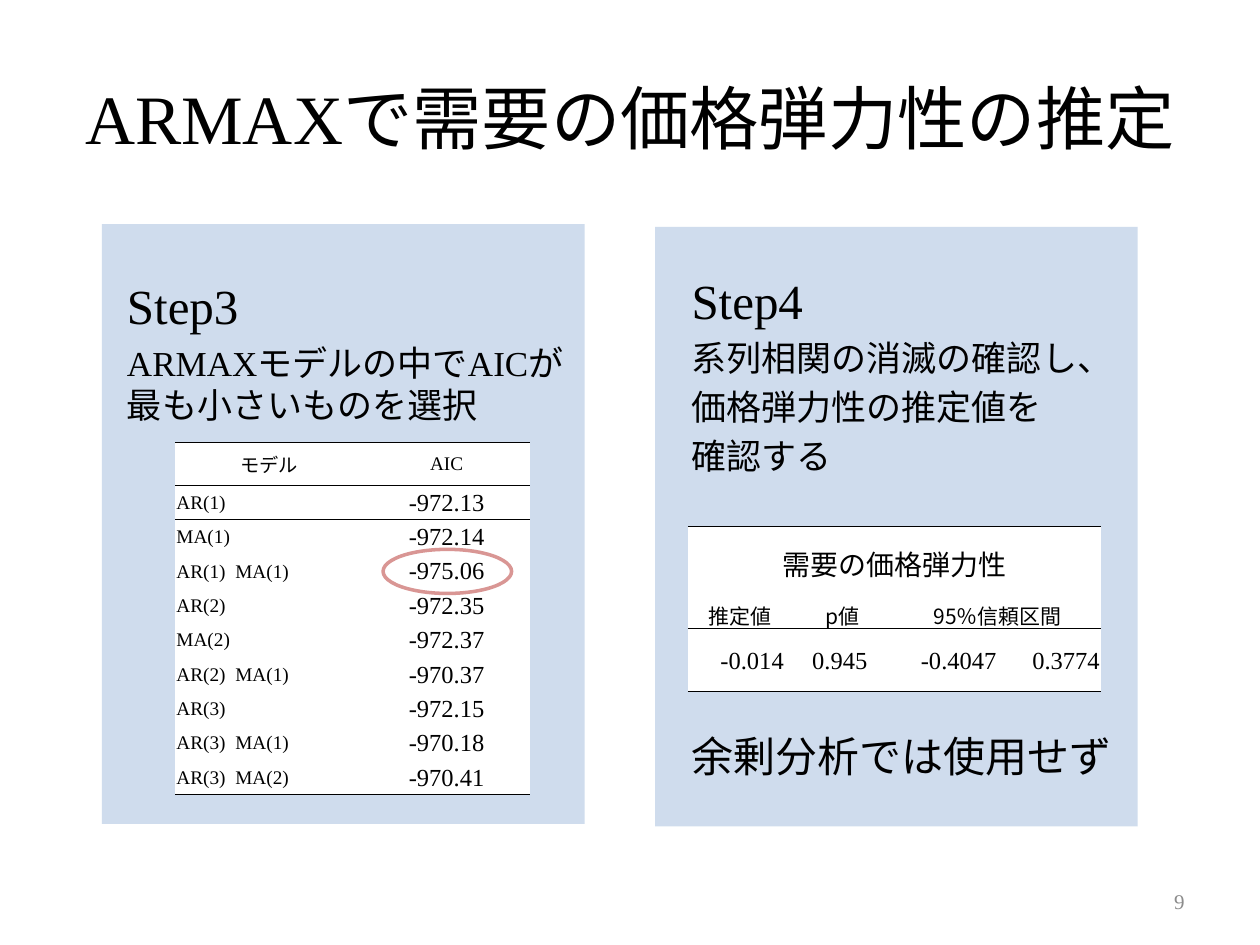
from lxml.etree import SubElement
from pptx import Presentation
from pptx.dml.color import RGBColor
from pptx.enum.shapes import MSO_SHAPE
from pptx.enum.text import MSO_ANCHOR, PP_ALIGN
from pptx.oxml import parse_xml
from pptx.oxml.ns import nsdecls, qn
from pptx.util import Inches, Pt

BLACK = RGBColor(0x00, 0x00, 0x00)
WHITE = RGBColor(0xFF, 0xFF, 0xFF)
BLUE = RGBColor(0x4F, 0x81, 0xBD)
ROSE = RGBColor(0xD9, 0x96, 0x94)
GREY = RGBColor(0x8C, 0x8C, 0x8C)
SERIF = "Times New Roman"
SANS = "Noto Sans CJK JP"
PLAIN = "{2D5ABB26-0587-4C30-8999-92F81FD0307C}"
LEFT, MID, RIGHT = PP_ALIGN.LEFT, PP_ALIGN.CENTER, PP_ALIGN.RIGHT

MODELS = [
    ("AR(1)", "-972.13"),
    ("MA(1)", "-972.14"),
    ("AR(1)  MA(1)", "-975.06"),
    ("AR(2)", "-972.35"),
    ("MA(2)", "-972.37"),
    ("AR(2)  MA(1)", "-970.37"),
    ("AR(3)", "-972.15"),
    ("AR(3)  MA(1)", "-970.18"),
    ("AR(3)  MA(2)", "-970.41"),
]


def add_run(para, text, size, font=SERIF, color=BLACK):
    run = para.add_run()
    run.text = text
    run.font.size = Pt(size)
    run.font.name = font
    run.font.color.rgb = color
    east = SubElement(run.font._element, qn("a:ea"))
    east.set("typeface", SANS)


def add_text(slide, box, lines, align=LEFT, anchor=MSO_ANCHOR.TOP,
             color=BLACK, gap=0.2, pitch=None):
    """Lines are (text, size); gap is a share of the size."""
    frame = slide.shapes.add_textbox(*map(Inches, box)).text_frame
    frame.word_wrap = True
    frame.vertical_anchor = anchor
    for i, (text, size) in enumerate(lines):
        para = frame.paragraphs[0] if i == 0 else frame.add_paragraph()
        para.alignment = align
        para.space_before = Pt(size * gap)
        if pitch and i > 0:
            para.line_spacing = Pt(size * pitch)
        add_run(para, text, size, color=color)
    return frame


def add_panel(slide, left, top):
    box = map(Inches, (left, top, 3.83, 4.76))
    panel = slide.shapes.add_shape(MSO_SHAPE.RECTANGLE, *box)
    panel.shadow.inherit = False
    panel.line.fill.background()
    panel.fill.solid()
    panel.fill.fore_color.rgb = BLUE
    tint = panel._element.spPr.find(".//" + qn("a:srgbClr"))
    SubElement(tint, qn("a:alpha")).set("val", "27000")


def add_ring(slide, box):
    ring = slide.shapes.add_shape(MSO_SHAPE.OVAL, *map(Inches, box))
    ring.shadow.inherit = False
    ring.fill.background()
    ring.line.color.rgb = ROSE
    ring.line.width = Pt(2)


def add_grid(slide, left, top, cols, rows):
    frame = slide.shapes.add_table(
        len(rows), len(cols), Inches(left), Inches(top),
        Inches(sum(cols)), Inches(sum(rows)))
    grid = frame.table
    grid.first_row = grid.horz_banding = False
    grid._tbl.tblPr.find(qn("a:tableStyleId")).text = PLAIN
    for col, width in zip(grid.columns, cols):
        col.width = Inches(width)
    for row, height in zip(grid.rows, rows):
        row.height = Inches(height)
    for cell in grid.iter_cells():
        cell.fill.solid()
        cell.fill.fore_color.rgb = WHITE
        cell.vertical_anchor = MSO_ANCHOR.MIDDLE
        cell.margin_left = cell.margin_right = cell.margin_top = Inches(0.01)
        cell.margin_bottom = 0
    return grid


def set_cell(cell, text, size, align=MID, font=SERIF):
    para = cell.text_frame.paragraphs[0]
    para.alignment = align
    add_run(para, text, size, font)


def rule(grid, row, *sides):
    """Draw thin lines along a row; sides are T and B, in that order."""
    for cell in grid.rows[row].cells:
        props = cell._tc.get_or_add_tcPr()
        for i, side in enumerate(sides):
            props.insert(i, parse_xml(
                f'<a:ln{side} {nsdecls("a")} w="6350"><a:solidFill>'
                f'<a:srgbClr val="{BLACK}"/></a:solidFill></a:ln{side}>'))


def add_models(slide):
    grid = add_grid(slide, 1.39, 3.51, [1.49, 1.33],
                    [0.34] + [0.273] * len(MODELS))
    set_cell(grid.cell(0, 0), "モデル", 11, font=SANS)
    set_cell(grid.cell(0, 1), "AIC", 11)
    for i, (name, score) in enumerate(MODELS, 1):
        set_cell(grid.cell(i, 0), name, 11, LEFT)
        set_cell(grid.cell(i, 1), score, 14)
    rule(grid, 0, "T", "B")
    rule(grid, 1, "T")
    rule(grid, len(MODELS), "B")


def add_result(slide):
    grid = add_grid(slide, 5.46, 4.18, [0.82] * 4, [0.57, 0.24, 0.5])
    grid.cell(0, 0).merge(grid.cell(0, 3))
    grid.cell(1, 2).merge(grid.cell(1, 3))
    set_cell(grid.cell(0, 0), "需要の価格弾力性", 16, font=SANS)
    for i, head in enumerate(["推定値", "p値", "95％信頼区間"]):
        set_cell(grid.cell(1, i), head, 12, font=SANS)
    values = [("-0.014 ", RIGHT), ("0.945 ", MID),
              ("-0.4047", RIGHT), ("0.3774", RIGHT)]
    for i, (value, align) in enumerate(values):
        set_cell(grid.cell(2, i), value, 14, align)
    rule(grid, 0, "T")
    rule(grid, 1, "B")
    rule(grid, 2, "T", "B")


def main():
    deck = Presentation()
    deck.slide_width, deck.slide_height = Inches(10), Inches(7.5)
    slide = deck.slides.add_slide(deck.slide_layouts[6])

    # Title
    title = add_text(slide, (0.5, 0.3, 9, 1.25),
                     [("ARMAXで需要の価格弾力性の推定", 39.6)],
                     MID, MSO_ANCHOR.MIDDLE, gap=0)
    title.margin_left = title.margin_right = 0

    # Step 3: choice of model
    add_panel(slide, 0.81, 1.78)
    add_text(slide, (0.91, 2.14, 3.73, 1.3),
             [("Step3", 28),
              ("ARMAXモデルの中でAICが最も小さいものを選択", 20)], pitch=1.2)
    add_models(slide)
    add_ring(slide, (3.04, 4.36, 1.02, 0.35))

    # Step 4: elasticity
    add_panel(slide, 5.2, 1.8)
    add_text(slide, (5.39, 2.1, 3.7, 1.8),
             [("Step4", 28), ("系列相関の消滅の確認し、", 20),
              ("価格弾力性の推定値を", 20), ("確認する", 20)], pitch=1.2)
    add_result(slide)
    add_text(slide, (5.39, 5.7, 3.7, 0.6),
             [("余剰分析では使用せず", 24)],
             anchor=MSO_ANCHOR.MIDDLE, gap=0)

    # Page number
    add_text(slide, (7.17, 6.95, 2.33, 0.4), [("9", 12)], RIGHT,
             MSO_ANCHOR.MIDDLE, GREY, gap=0)
    deck.save("out.pptx")


if __name__ == "__main__":
    main()
